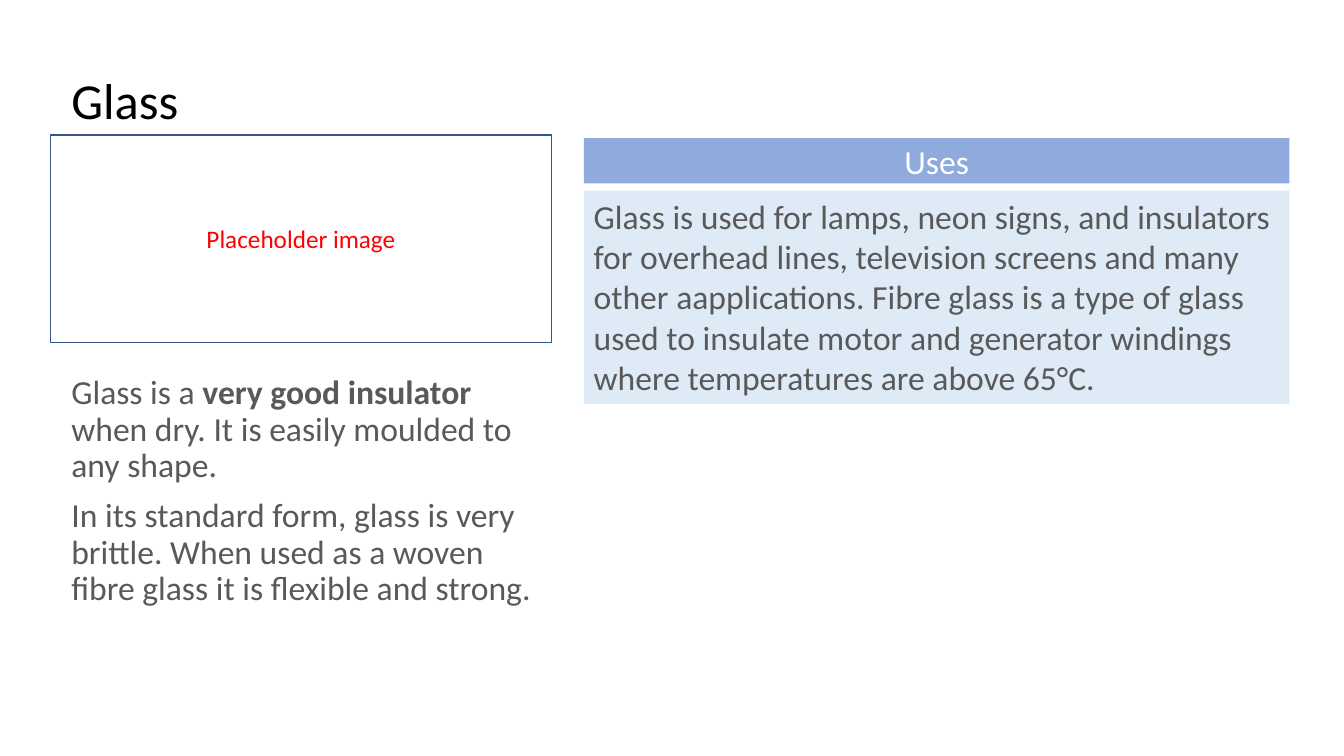
"""Build the slide on glass as an insulator."""
import pptx
import pptx.util
import pptx.dml.color
import pptx.enum.shapes
import pptx.enum.text

Inches = pptx.util.Inches
Pt = pptx.util.Pt
ALIGN = pptx.enum.text.PP_ALIGN
ANCHOR = pptx.enum.text.MSO_ANCHOR
FONT = "Calibri"
COLORS = {
    "title": "000000",
    "body": "595959",
    "head": "8FAADC",
    "panel": "DEEBF7",
    "white": "FFFFFF",
    "frame": "325491",
    "note": "FF0000",
}


def color(name):
    return pptx.dml.color.RGBColor.from_string(COLORS[name])


def write(shape, paras, size, tint, anchor=ANCHOR.TOP, align=ALIGN.LEFT,
          lines=None, before=0):
    frame = shape.text_frame
    frame.word_wrap = True
    frame.vertical_anchor = anchor
    for i, runs in enumerate(paras):
        para = frame.paragraphs[0] if i == 0 else frame.add_paragraph()
        para.alignment = align
        para.line_spacing = lines
        para.space_before = Pt(before)
        for text, bold in runs:
            run = para.add_run()
            run.text = text
            run.font.name = FONT
            run.font.size = Pt(size)
            run.font.bold = bold
            run.font.color.rgb = color(tint)


def add_text(slide, box, paras, size, tint, **style):
    shape = slide.shapes.add_textbox(*map(Inches, box))
    write(shape, paras, size, tint, **style)


def add_box(slide, box, paras, size, tint, fill=None, line=None, **style):
    kind = pptx.enum.shapes.MSO_SHAPE.RECTANGLE
    shape = slide.shapes.add_shape(kind, *map(Inches, box))
    shape.shadow.inherit = False
    if fill:
        shape.fill.solid()
        shape.fill.fore_color.rgb = color(fill)
    else:
        shape.fill.background()
    if line:
        shape.line.color.rgb = color(line)
        shape.line.width = Pt(1)
    else:
        shape.line.fill.background()
    write(shape, paras, size, tint, **style)


def main():
    deck = pptx.Presentation()
    deck.slide_width = Inches(13.33)
    deck.slide_height = Inches(7.5)
    slide = deck.slides.add_slide(deck.slide_layouts[6])
    center = {"anchor": ANCHOR.MIDDLE, "align": ALIGN.CENTER}

    add_text(slide, (0.61, 0.29, 11.29, 1.05), [[("Glass", False)]],
             36, "title", anchor=ANCHOR.BOTTOM, lines=0.9)
    facts = [
        [("Glass is a ", False), ("very good insulator", True),
         (" when dry. It is easily moulded to any shape.", False)],
        [("In its standard form, glass is very brittle. When used as a "
          "woven fibre glass it is flexible and strong.", False)],
    ]
    add_text(slide, (0.61, 3.68, 4.86, 2.08), facts, 24, "body",
             lines=0.9, before=10)

    add_box(slide, (5.79, 1.37, 7, 0.45), [[("Uses", False)]],
            24, "white", fill="head", **center)
    uses = [
        [("Glass is used for lamps, neon signs, and insulators for overhead "
          "lines, television screens and many other aapplications. Fibre "
          "glass is a type of glass", False)],
        [("used to insulate motor and generator windings where temperatures "
          "are above 65°C.", False)],
    ]
    add_box(slide, (5.79, 1.89, 7, 2.12), uses, 24, "body", fill="panel")
    add_box(slide, (0.5, 1.34, 4.97, 2.06), [[("Placeholder image", False)]],
            18, "note", line="frame", **center)
    deck.save("out.pptx")


if __name__ == "__main__":
    main()
